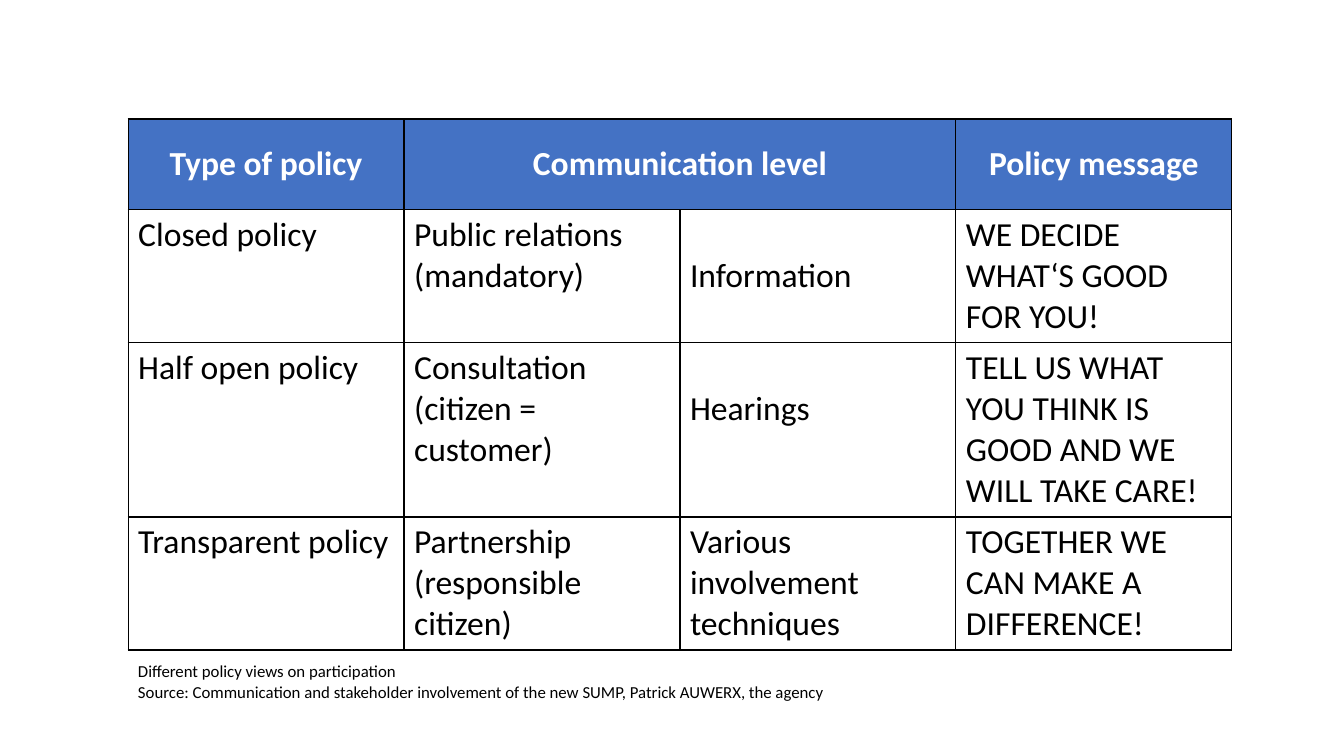
import pptx
import pptx.dml.color
import pptx.enum.text
import pptx.oxml
import pptx.oxml.ns
import pptx.util

Pt = pptx.util.Pt
RGBColor = pptx.dml.color.RGBColor
ALIGN = pptx.enum.text.PP_ALIGN
ANCHOR = pptx.enum.text.MSO_ANCHOR

HEADINGS = ["Type of policy", "Communication level", "", "Policy message"]
POLICIES = [
    ["Closed policy", "Public relations (mandatory)", "Information",
     "WE DECIDE WHAT‘S GOOD FOR YOU!"],
    ["Half open policy", "Consultation\n(citizen = customer)", "Hearings",
     "TELL US WHAT YOU THINK IS GOOD AND WE WILL TAKE CARE!"],
    ["Transparent policy", "Partnership (responsible citizen)",
     "Various involvement techniques", "TOGETHER WE CAN MAKE A DIFFERENCE!"],
]
LOWERED = ("Information", "Hearings")
CAPTION = [
    "Different policy views on participation",
    "Source: Communication and stakeholder involvement of the new SUMP, "
    "Patrick AUWERX, the agency",
]

FONT = "Calibri"
BLACK = RGBColor(0x00, 0x00, 0x00)
WHITE = RGBColor(0xFF, 0xFF, 0xFF)
BLUE = RGBColor(0x44, 0x72, 0xC4)

LEFT, TOP = 91.5, 85
COLUMN_WIDTH = 197.1
ROW_HEIGHTS = [64.8, 95.1, 124.4, 95.1]
CELL_MARGIN = 3.6
LINE_HEIGHT = 29.3


def write(frame, text, size, color, bold=False, align=ALIGN.LEFT):
    frame.text = text
    for para in frame.paragraphs:
        para.alignment = align
        para.font.name = FONT
        para.font.size = Pt(size)
        para.font.bold = bold
        para.font.color.rgb = color


def add_borders(cell):
    """Draw a thin black line on all four sides, ahead of the cell's fill."""
    properties = cell._tc.get_or_add_tcPr()
    for position, side in enumerate(("lnL", "lnR", "lnT", "lnB")):
        line = pptx.oxml.parse_xml(
            f'<a:{side} {pptx.oxml.ns.nsdecls("a")} w="{Pt(1)}">'
            f'<a:solidFill><a:srgbClr val="{BLACK}"/></a:solidFill></a:{side}>')
        properties.insert(position, line)


def add_policy_table(page):
    rows = [HEADINGS] + POLICIES
    columns = len(HEADINGS)
    table = page.shapes.add_table(
        len(rows), columns, Pt(LEFT), Pt(TOP),
        Pt(COLUMN_WIDTH * columns), Pt(sum(ROW_HEIGHTS))).table
    for column in table.columns:
        column.width = Pt(COLUMN_WIDTH)
    for row, height in zip(table.rows, ROW_HEIGHTS):
        row.height = Pt(height)
    table.cell(0, 1).merge(table.cell(0, 2))

    for row_index, texts in enumerate(rows):
        is_header = row_index == 0
        for column_index, text in enumerate(texts):
            cell = table.cell(row_index, column_index)
            cell.fill.solid()
            cell.fill.fore_color.rgb = BLUE if is_header else WHITE
            add_borders(cell)
            if cell.is_spanned:
                continue
            if is_header:
                cell.vertical_anchor = ANCHOR.MIDDLE
                write(cell.text_frame, text, 24, WHITE, True, ALIGN.CENTER)
            else:
                write(cell.text_frame, text, 24, BLACK)
            if text in LOWERED:
                cell.margin_top = Pt(CELL_MARGIN + LINE_HEIGHT)


def add_caption(page):
    box = page.shapes.add_textbox(Pt(LEFT), Pt(468.7), Pt(512), Pt(51))
    box.text_frame.word_wrap = False
    write(box.text_frame, "\n".join(CAPTION), 12, BLACK)


def main():
    deck = pptx.Presentation()
    deck.slide_width, deck.slide_height = Pt(960), Pt(540)
    page = deck.slides.add_slide(deck.slide_layouts[6])
    add_policy_table(page)
    add_caption(page)
    deck.save("out.pptx")


if __name__ == "__main__":
    main()
